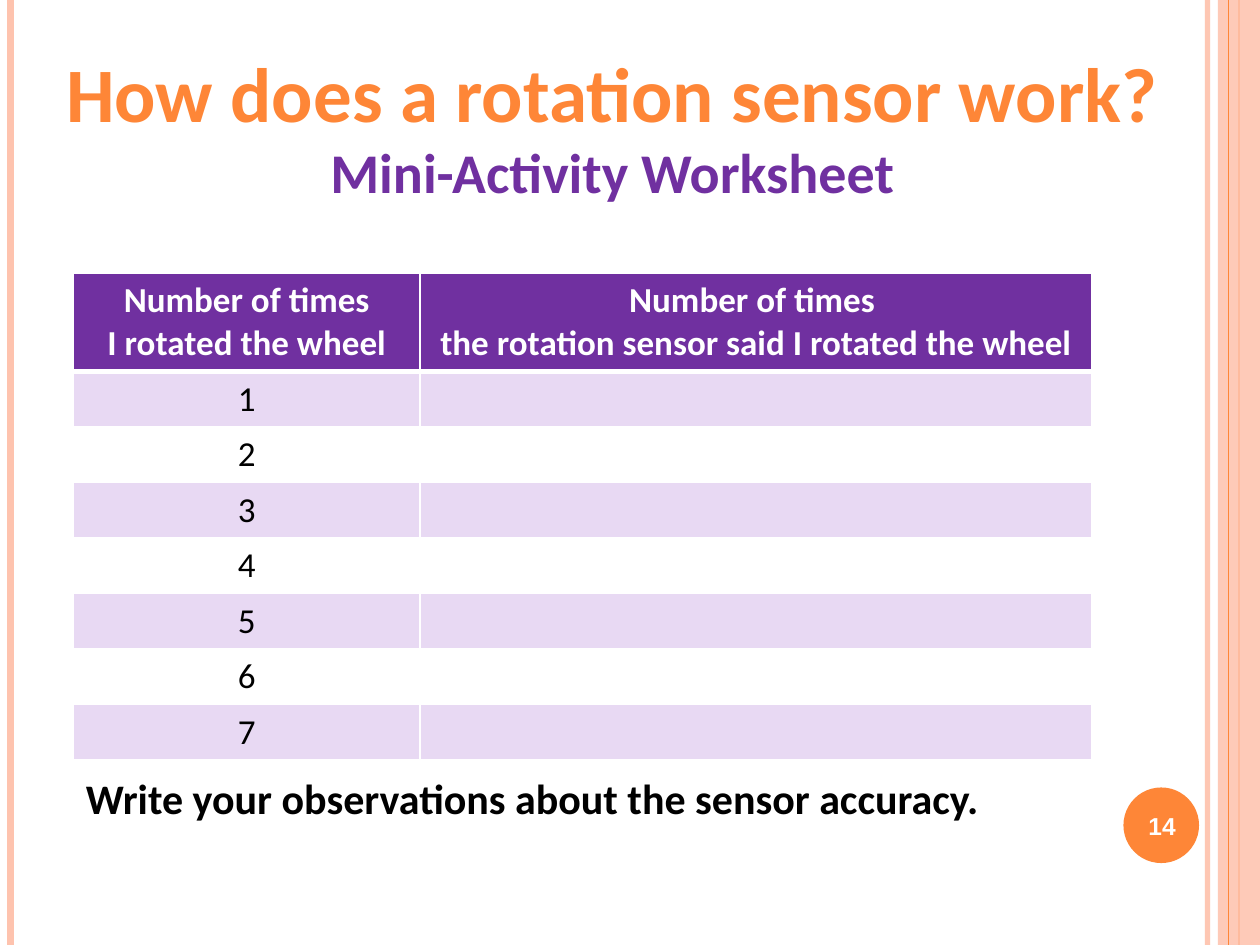
from dataclasses import dataclass

from lxml import etree
from pptx import Presentation, util as u
from pptx.dml.color import RGBColor
from pptx.enum import shapes, text
from pptx.oxml import ns

Pt = u.Pt


@dataclass(frozen=True)
class Theme:
    """Colours, fonts and type sizes of the slide."""
    orange: str = "FE8637"
    peach: str = "FEC3AE"
    purple: str = "7030A0"
    lilac: str = "E8D9F3"
    white: str = "FFFFFF"
    black: str = "000000"
    body_font: str = "Calibri"
    number_font: str = "Arial"
    title: int = 44
    subtitle: int = 32
    prompt: int = 24
    cell: int = 20
    number: int = 14


THEME = Theme()


def set_opacity(fill_parent, percent):
    """Make the solid fill found under an element partly transparent."""
    colour = fill_parent.find(".//" + ns.qn("a:srgbClr"))
    etree.SubElement(colour, ns.qn("a:alpha"), val=str(percent * 1000))


def add_rule(slide, x, colour, weight, opacity=100):
    """Draw a vertical rule over the full slide height."""
    rule = slide.shapes.add_connector(shapes.MSO_CONNECTOR.STRAIGHT, Pt(x), 0, Pt(x), Pt(540))
    rule.line.color.rgb = RGBColor.from_string(colour)
    rule.line.width = Pt(weight)
    properties = rule.line._get_or_add_ln().getparent()
    if opacity < 100:
        set_opacity(properties, opacity)
    etree.SubElement(properties, ns.qn("a:effectLst"))


def add_block(slide, preset, box, colour, opacity=100):
    """Draw a filled shape without outline."""
    block = slide.shapes.add_shape(preset, *map(Pt, box))
    block.shadow.inherit = False
    block.fill.solid()
    block.fill.fore_color.rgb = RGBColor.from_string(colour)
    block.line.fill.background()
    if opacity < 100:
        set_opacity(block.fill._xPr, opacity)


def add_run(paragraph, words, size, colour, bold=True, font=THEME.body_font):
    """Append one formatted run to a paragraph."""
    run = paragraph.add_run()
    run.text = words
    run.font.size = Pt(size)
    run.font.bold = bold
    run.font.name = font
    run.font.color.rgb = RGBColor.from_string(colour)


def add_text(slide, box, wrap=True, anchor=text.MSO_ANCHOR.TOP):
    """Add a text box and return its frame."""
    frame = slide.shapes.add_textbox(*map(Pt, box)).text_frame
    frame.word_wrap = wrap
    frame.vertical_anchor = anchor
    return frame


def add_border(cell, side, weight):
    """Give one side of a cell a white border."""
    border = etree.SubElement(cell._tc.get_or_add_tcPr(), ns.qn(f"a:ln{side}"), w=str(Pt(weight)))
    fill = etree.SubElement(border, ns.qn("a:solidFill"))
    etree.SubElement(fill, ns.qn("a:srgbClr"), val=THEME.white)


def fill_cell(cell, lines, fill, colour, bold, bottom):
    """Set the borders, fill and centred lines of a cell."""
    for side, weight in (("L", 1), ("R", 1), ("T", 1), ("B", bottom)):
        add_border(cell, side, weight)
    cell.fill.solid()
    cell.fill.fore_color.rgb = RGBColor.from_string(fill)
    paragraph = cell.text_frame.paragraphs[0]
    paragraph.alignment = text.PP_ALIGN.CENTER
    for index, line in enumerate(lines):
        if index:
            paragraph.add_line_break()
        add_run(paragraph, line, THEME.cell, colour, bold)


def add_worksheet(slide, headings, trials):
    """Add the table with one empty answer cell for each trial."""
    worksheet = slide.shapes.add_table(trials + 1, 2, Pt(42), Pt(156), Pt(582), Pt(273.6)).table
    for column, width in zip(worksheet.columns, (198, 384)):
        column.width = Pt(width)
    for index, row in enumerate(worksheet.rows):
        row.height = Pt(29.6 if index else 50.4)
    for cell, lines in zip(worksheet.rows[0].cells, headings):
        fill_cell(cell, lines, THEME.purple, THEME.white, True, 3)
    for trial in range(1, trials + 1):
        band = THEME.lilac if trial % 2 else THEME.white
        for cell, lines in zip(worksheet.rows[trial].cells, ([str(trial)], [])):
            fill_cell(cell, lines, band, THEME.black, False, 1)


def add_heading(slide):
    """Add the title and subtitle."""
    heading = add_text(slide, (12, 22.3, 676, 90.7))
    title, subtitle = heading.paragraphs[0], heading.add_paragraph()
    title.alignment = subtitle.alignment = text.PP_ALIGN.CENTER
    add_run(title, "How does a rotation sensor work?", THEME.title, THEME.orange)
    add_run(subtitle, "Mini-Activity Worksheet", THEME.subtitle, THEME.purple)


def add_page_number(slide, number):
    """Add the page number over its disc."""
    page = add_text(slide, (640, 451.4, 48.2, 41), anchor=text.MSO_ANCHOR.MIDDLE).paragraphs[0]
    page.alignment = text.PP_ALIGN.CENTER
    add_run(page, number, THEME.number, THEME.white, font=THEME.number_font)


def add_prompt(slide):
    """Add the writing prompt below the table."""
    frame = add_text(slide, (42, 438, 544.3, 36), wrap=False)
    frame.auto_size = text.MSO_AUTO_SIZE.SHAPE_TO_FIT_TEXT
    prompt = frame.paragraphs[0]
    prompt.space_before = Pt(6)
    add_run(prompt, "Write your observations about the sensor accuracy.", THEME.prompt, THEME.black)


def main():
    """Build and save the worksheet slide."""
    deck = Presentation()
    deck.slide_width, deck.slide_height = Pt(720), Pt(540)
    slide = deck.slides.add_slide(deck.slide_layouts[6])
    add_rule(slide, 690, THEME.peach, 3, opacity=93)
    add_rule(slide, 6, THEME.peach, 4.5)
    add_rule(slide, 708, THEME.orange, 1.5)
    add_block(slide, shapes.MSO_SHAPE.RECTANGLE, (696, 0, 24, 540), THEME.peach, opacity=87)
    add_rule(slide, 702, THEME.orange, 0.75)
    add_block(slide, shapes.MSO_SHAPE.OVAL, (642, 450, 43.2, 43.2), THEME.orange)
    headings = (
        ("Number of times", "I rotated the wheel"),
        ("Number of times ", "the rotation sensor said I rotated the wheel"),
    )
    add_worksheet(slide, headings, trials=7)
    add_page_number(slide, "14")
    add_prompt(slide)
    add_heading(slide)
    deck.save("out.pptx")


if __name__ == "__main__":
    main()
